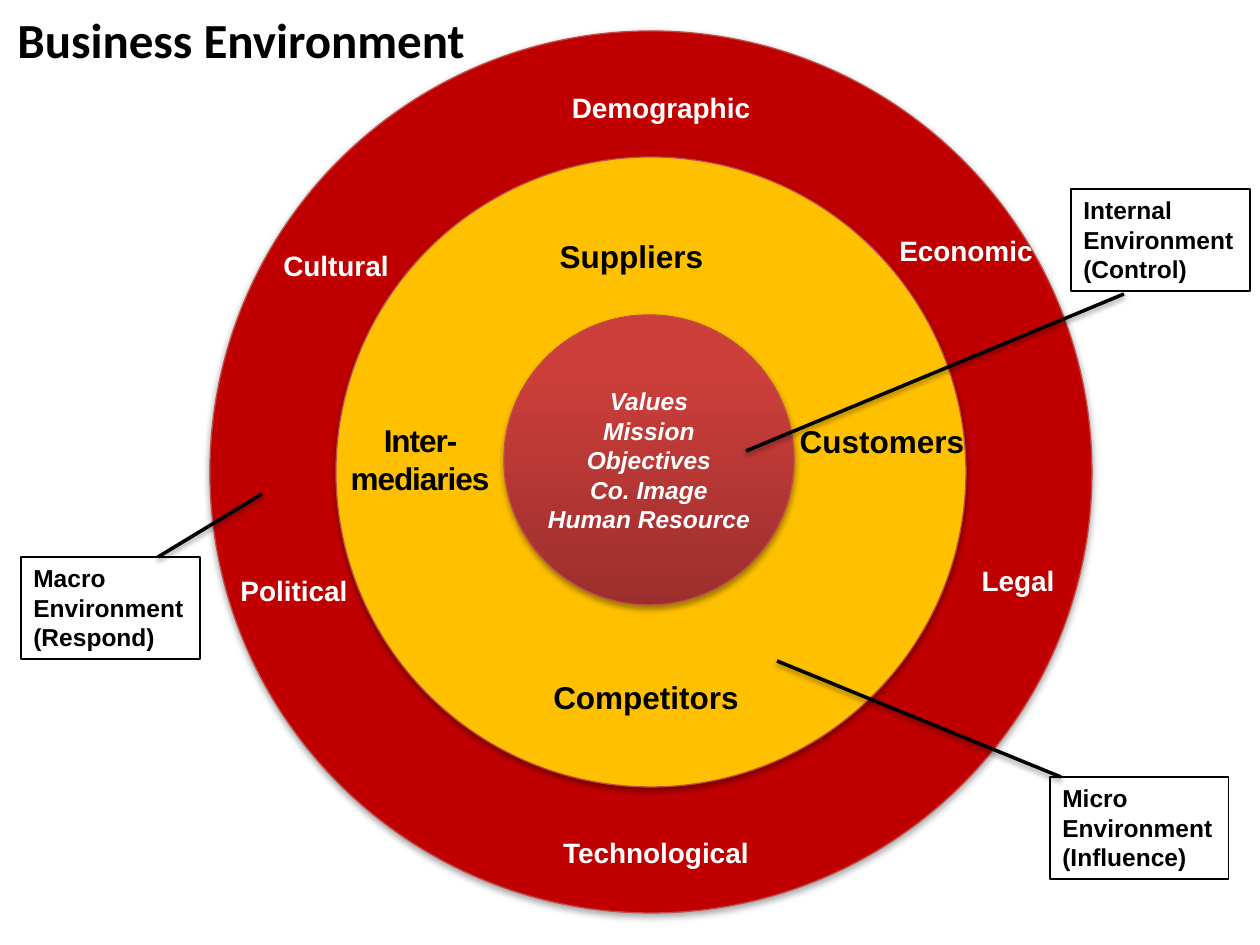
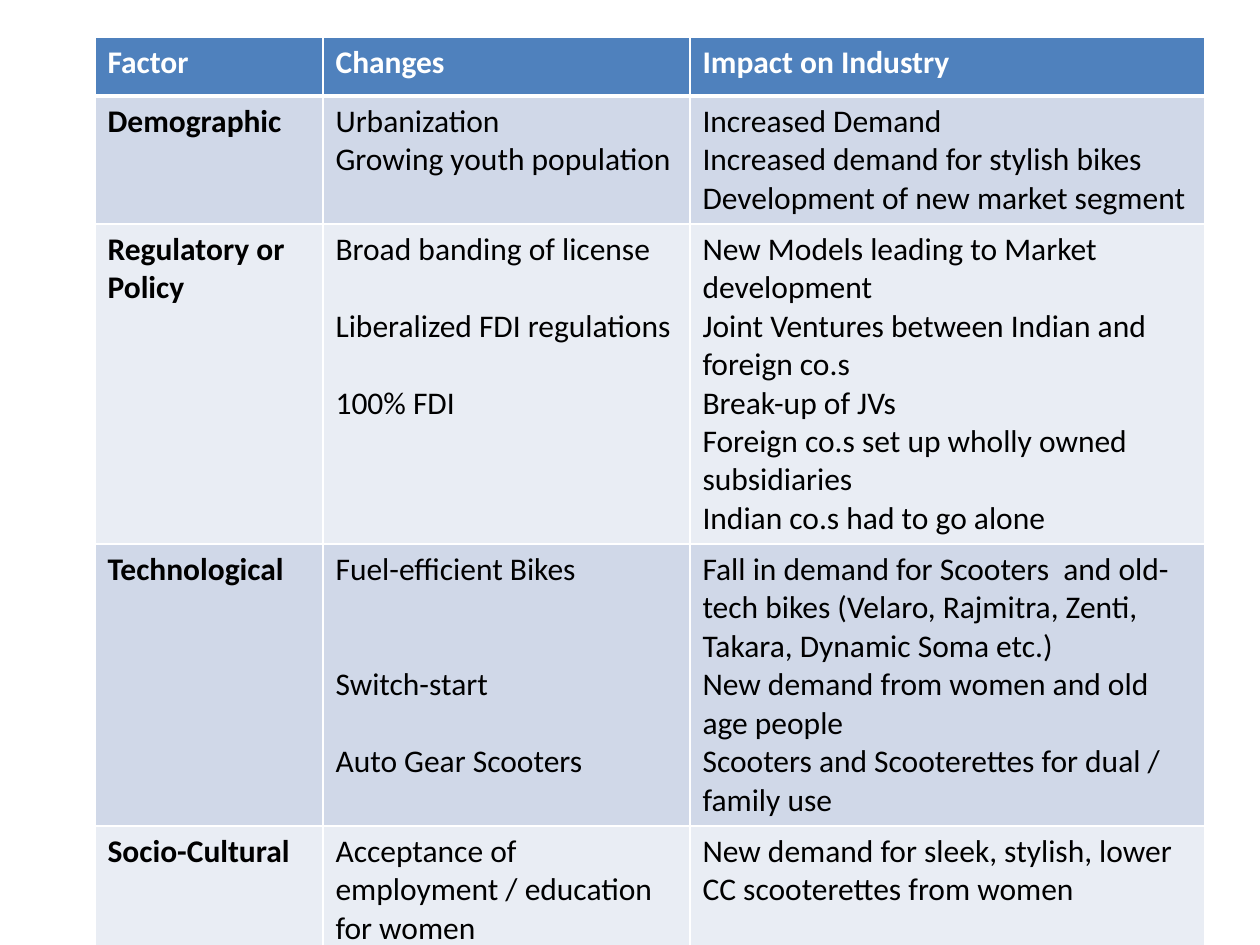
from lxml.etree import SubElement
from pptx import Presentation
from pptx.dml.color import RGBColor as RGB
from pptx.enum.shapes import MSO_CONNECTOR, MSO_SHAPE
from pptx.enum.text import MSO_ANCHOR as ANCHOR, PP_ALIGN as ALIGN
from pptx.oxml.ns import qn
from pptx.util import Pt

PX = 7257  # EMU in one px, 126 px to the inch
BLACK = RGB(0x00, 0x00, 0x00)
WHITE = RGB(0xFF, 0xFF, 0xFF)
RED = RGB(0xC0, 0x00, 0x00)
GOLD = RGB(0xFF, 0xC0, 0x00)
RIM = RGB(0xBF, 0x4C, 0x48)
DARK = RGB(0x9C, 0x2F, 0x2D)
LIGHT = RGB(0xCB, 0x3E, 0x3A)
BLUE = RGB(0x4F, 0x81, 0xBD)
BANDS = [RGB(0xE9, 0xED, 0xF4), RGB(0xD0, 0xD8, 0xE8)]


def write(frame, text, size, color, font="Arial", align=ALIGN.LEFT, bold=True):
    frame.text = text
    frame.word_wrap = True
    for para in frame.paragraphs:
        para.alignment = align
        for run in para.runs:
            run.font.name = font
            run.font.size = Pt(size)
            run.font.bold = bold
            run.font.color.rgb = color


def shade(shape, dist, alpha):
    """Add a soft black shadow below; call once fill and line are set."""
    effects = SubElement(shape._element.spPr, qn("a:effectLst"))
    outer = SubElement(effects, qn("a:outerShdw"), blurRad="40000",
                       dist=str(dist), dir="5400000", rotWithShape="0")
    tone = SubElement(outer, qn("a:srgbClr"), val="000000")
    SubElement(tone, qn("a:alpha"), val=str(alpha * 1000))


deck = Presentation()
deck.slide_width = 1260 * PX
deck.slide_height = 945 * PX
blank = deck.slide_layouts[6]

# Slide 1: rings of the business environment
slide = deck.slides.add_slide(blank)
shapes = slide.shapes

title = shapes.add_textbox(5 * PX, 0, 1074 * PX, 77 * PX).text_frame
write(title, "Business Environment", 28, BLACK, "Calibri")
title.vertical_anchor = ANCHOR.MIDDLE

rings = [(210, 31, 882, RED), (336, 157, 630, GOLD), (504, 315, 290, None)]
for x, y, size, color in rings:
    ring = shapes.add_shape(MSO_SHAPE.OVAL, x * PX, y * PX, size * PX, size * PX)
    if color:
        ring.fill.solid()
        ring.fill.fore_color.rgb = color
    else:
        ring.fill.gradient()
        ring.fill.gradient_angle = 90
        for stop, place, tone in zip(ring.fill.gradient_stops, (0, 0.8), (DARK, LIGHT)):
            stop.position = place
            stop.color.rgb = tone
    ring.line.color.rgb = RIM
    ring.line.width = Pt(0.75)
    shade(ring, 23000, 35)

core = ring.text_frame
write(core, "Values\nMission\nObjectives\nCo. Image\nHuman Resource", 14, WHITE,
      align=ALIGN.CENTER)
core.margin_left = core.margin_right = core.margin_top = core.margin_bottom = 0
core.vertical_anchor = ANCHOR.MIDDLE
for para in core.paragraphs:
    para.runs[0].font.italic = True

micro = [
    ("Suppliers", 529, 231, 205, 50),
    ("Competitors", 536, 672, 220, 50),
    ("Customers", 777, 416, 210, 63),
    ("Inter-mediaries", 336, 415, 168, 102),
]
macro = [
    ("Political", 210, 567, 168, 47),
    ("Economic", 882, 227, 168, 47),
    ("Technological", 535, 829, 242, 47),
    ("Cultural", 252, 242, 168, 47),
    ("Demographic", 556, 84, 210, 47),
    ("Legal", 934, 557, 168, 47),
]
for group, size, color in [(micro, 18, BLACK), (macro, 16, WHITE)]:
    for text, x, y, w, h in group:
        label = shapes.add_textbox(x * PX, y * PX, w * PX, h * PX)
        write(label.text_frame, text, size, color, align=ALIGN.CENTER)
        if text.startswith("Inter"):
            label.text_frame.paragraphs[0].runs[0].font._element.set("spc", "-60")

# Each callout: text, box corner, line start and line end
callouts = [
    ("Internal Environment (Control)", 1071, 189, (746, 451), (1124, 294)),
    ("Micro\nEnvironment (Influence)", 1050, 777, (777, 661), (1061, 777)),
    ("Macro\nEnvironment (Respond)", 21, 557, (158, 557), (262, 494)),
]
for text, x, y, start, end in callouts:
    box = shapes.add_shape(MSO_SHAPE.RECTANGLE, x * PX, y * PX, 179 * PX, 102 * PX)
    box.shadow.inherit = False
    box.fill.solid()
    box.fill.fore_color.rgb = WHITE
    box.line.color.rgb = BLACK
    box.line.width = Pt(0.75)
    write(box.text_frame, text, 14, BLACK)
    box.text_frame.vertical_anchor = ANCHOR.TOP
    line = shapes.add_connector(MSO_CONNECTOR.STRAIGHT,
                                *[n * PX for n in start + end])
    line.line.color.rgb = BLACK
    line.line.width = Pt(2)
    shade(line, 20000, 38)

# Slide 2: factors and their impact
slide = deck.slides.add_slide(blank)
rows = [
    ("Factor", "Changes", "Impact on Industry"),
    ("Demographic",
     "Urbanization\nGrowing youth population",
     "Increased Demand\nIncreased demand for stylish bikes\n"
     "Development of new market segment"),
    ("Regulatory or\nPolicy",
     "Broad banding of license\nLiberalized FDI regulations\n100% FDI",
     "New Models leading to Market development\n"
     "Joint Ventures between Indian and foreign co.s\nBreak-up of JVs\n"
     "Foreign co.s set up wholly owned subsidiaries\n"
     "Indian co.s had to go alone"),
    ("Technological",
     "Fuel-efficient Bikes\nSwitch-start\nAuto Gear Scooters",
     "Fall in demand for Scooters  and old-tech bikes "
     "(Velaro, Rajmitra, Zenti, Takara, Dynamic Soma etc.)\n"
     "New demand from women and old age people\n"
     "Scooters and Scooterettes for dual / family use"),
    ("Socio-Cultural",
     "Acceptance of employment / education for women",
     "New demand for sleek, stylish, lower CC scooterettes from women"),
]
widths = [228, 367, 515]
heights = [59, 128, 320, 282, 119]
# Space in points that lines a change up with its impact
gaps = {"Liberalized FDI regulations": 22, "100% FDI": 22,
        "Switch-start": 44, "Auto Gear Scooters": 22}

table = slide.shapes.add_table(len(rows), len(widths), 95 * PX, 37 * PX,
                               sum(widths) * PX, sum(heights) * PX).table
for col, width in zip(table.columns, widths):
    col.width = width * PX
for row, height in zip(table.rows, heights):
    row.height = height * PX

for r, texts in enumerate(rows):
    for c, text in enumerate(texts):
        cell = table.cell(r, c)
        head = r == 0
        write(cell.text_frame, text, 18, WHITE if head else BLACK, "Calibri",
              bold=head or c == 0)
        for para in cell.text_frame.paragraphs:
            if para.text in gaps:
                para.space_before = Pt(gaps[para.text])
        props = cell._tc.get_or_add_tcPr()
        for side in "LRTB":
            thick = (head and side == "B") or (r == 1 and side == "T")
            edge = SubElement(props, qn("a:ln" + side), w=str(Pt(3 if thick else 1)))
            fill = SubElement(edge, qn("a:solidFill"))
            SubElement(fill, qn("a:srgbClr"), val=str(WHITE))
        cell.fill.solid()
        cell.fill.fore_color.rgb = BLUE if head else BANDS[r % 2]

deck.save("out.pptx")
